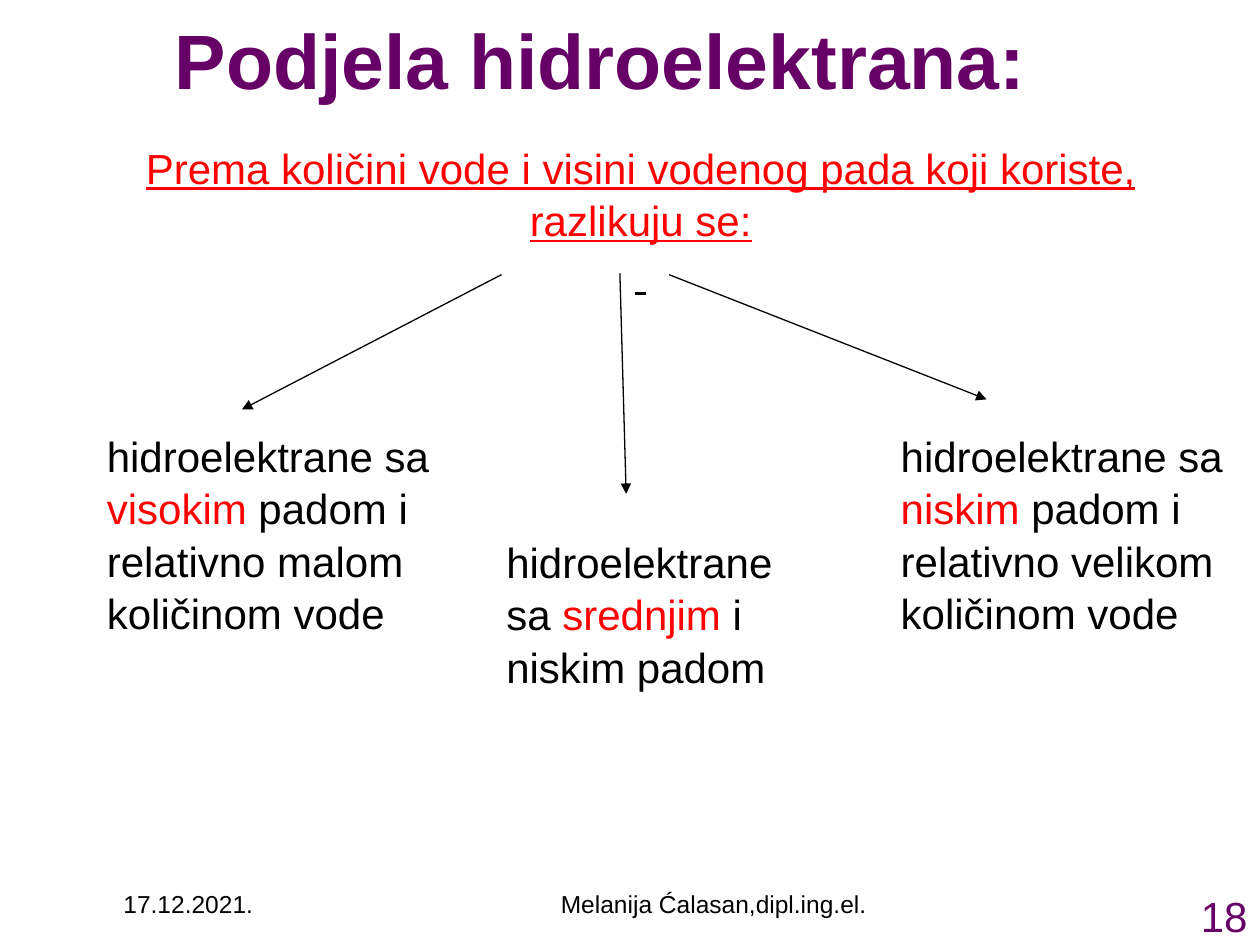
from dataclasses import dataclass

from pptx import Presentation, util as u
from pptx.dml.color import RGBColor
from pptx.enum import shapes, text
from pptx.oxml import parse_xml
from pptx.oxml.ns import nsdecls

LEFT, MID, RIGHT = text.PP_ALIGN.LEFT, text.PP_ALIGN.CENTER, text.PP_ALIGN.RIGHT


@dataclass(frozen=True)
class Theme:
    face: str = "Arial"
    ink: str = "000000"
    red: str = "FF0000"
    plum: str = "660066"
    title: int = 44
    body: int = 24
    foot: int = 14
    line: float = 0.75
    lead: float = 1.04


class Deck:
    def __init__(self, theme):
        self.theme = theme
        self.prs = Presentation()
        self.prs.slide_width, self.prs.slide_height = u.Inches(10), u.Inches(7.5)
        self.slide = self.prs.slides.add_slide(self.prs.slide_layouts[6])

    def label(self, box, paras, size, align=LEFT, drop=0.07, **frame):
        """Add a text box; paras is a list of lists of (words, colour, extra font values)."""
        shape = self.slide.shapes.add_textbox(*map(u.Inches, box))
        body = shape.text_frame
        look = {"word_wrap": True, "margin_top": u.Inches(drop), **frame}
        for key, value in look.items():
            setattr(body, key, value)
        for i, runs in enumerate(paras):
            para = body.add_paragraph() if i else body.paragraphs[0]
            para.alignment, para.line_spacing = align, self.theme.lead
            for words, color, extra in runs:
                run = para.add_run()
                run.text = words
                font = {"name": self.theme.face, "size": u.Pt(size), **extra}
                for key, value in font.items():
                    setattr(run.font, key, value)
                run.font.color.rgb = RGBColor.from_string(color)

    def arrow(self, start, end):
        link = self.slide.shapes.add_connector(
            shapes.MSO_CONNECTOR.STRAIGHT, *map(u.Inches, start + end))
        link.line.width = u.Pt(self.theme.line)
        link.line.color.rgb = RGBColor.from_string(self.theme.ink)
        link.line._get_or_add_ln().append(
            parse_xml(f'<a:tailEnd {nsdecls("a")} type="triangle"/>'))
        link._element.spPr.append(parse_xml(f'<a:effectLst {nsdecls("a")}/>'))


def main():
    t = Theme()
    deck = Deck(t)

    footer = [
        (0.33, 2.33, "17.12.2021.", t.foot, t.ink, MID),
        (2.75, 5.83, "Melanija Ćalasan,dipl.ing.el.", t.foot, t.ink, MID),
        (8.67, 1.33, "18", t.body, t.plum, RIGHT),
    ]
    for left, width, words, size, color, align in footer:
        deck.label((left, 6.98, width, 0.52), [[(words, color, {})]], size, align)

    deck.label((0.27, 0, 9, 1.51),
               [[("Podjela hidroelektrana:", t.plum, {"bold": True})]], t.title, MID)

    under = {"underline": True}
    lead = "Prema količini vode i visini vodenog pada koji koriste, razlikuju se:"
    deck.label((0.75, 1.08, 8.67, 1.31),
               [[(lead, t.red, under)], [(" ", t.ink, under)]], t.body, MID,
               drop=0.05, vertical_anchor=text.MSO_ANCHOR.MIDDLE)

    kinds = [
        ((0.75, 3.33, 2.83, 1.72), "visokim", " padom i relativno malom količinom vode"),
        ((3.92, 4.17, 2.5, 1.31), "srednjim", " i niskim padom"),
        ((7.05, 3.33, 2.95, 1.72), "niskim", " padom i relativno velikom količinom vode"),
    ]
    for box, key, rest in kinds:
        runs = [("hidroelektrane sa ", t.ink, {}), (key, t.red, {}), (rest, t.ink, {})]
        deck.label(box, [runs], t.body)

    arrows = [
        ((4.92, 2.17), (4.97, 3.92)),
        ((3.98, 2.18), (1.92, 3.25)),
        ((5.31, 2.18), (7.83, 3.17)),
    ]
    for start, end in arrows:
        deck.arrow(start, end)

    deck.prs.save("out.pptx")


if __name__ == "__main__":
    main()
